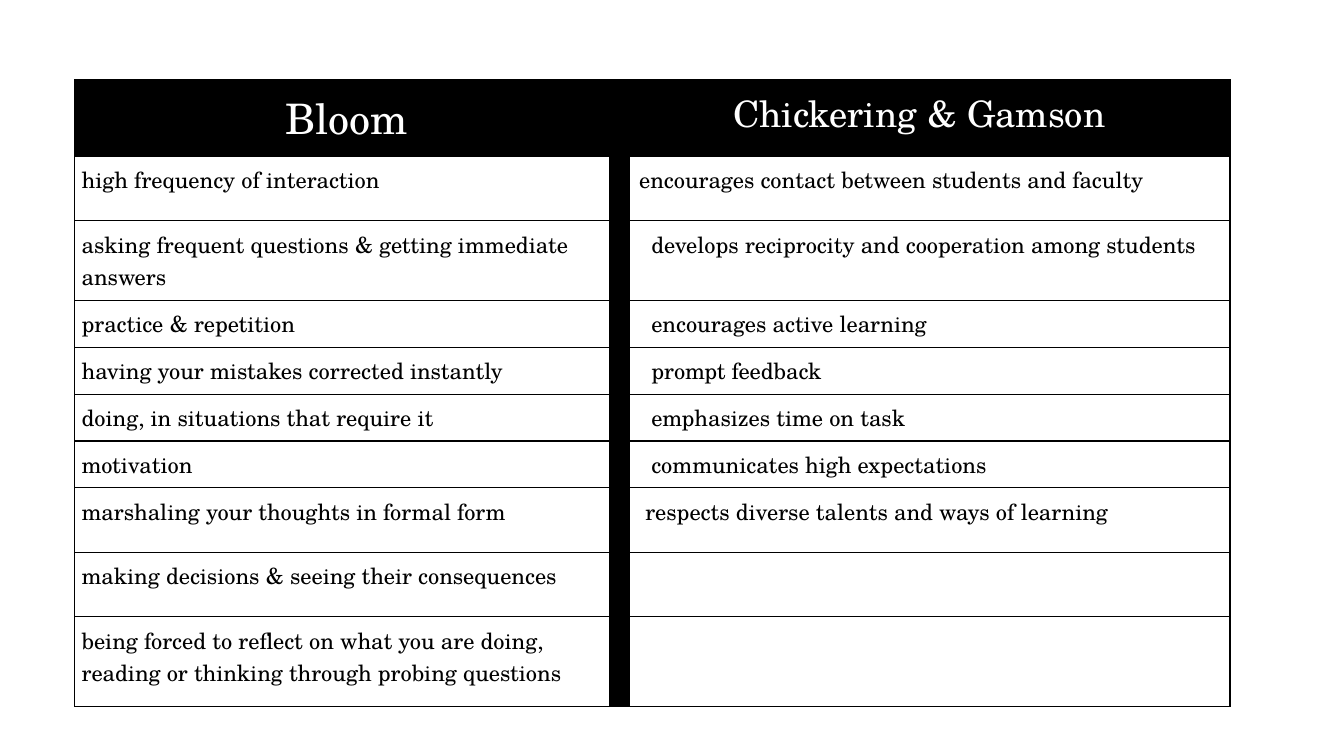
from lxml.etree import SubElement
from pptx import Presentation
from pptx.dml.color import RGBColor as RGB
from pptx.enum.text import PP_ALIGN as Align
from pptx.oxml.ns import qn
from pptx.util import Inches, Pt

COLORS = {"ink": "000000", "paper": "FFFFFF"}
COLS = [5.4, 6.06]
ROWS = [0.76, 0.64, 0.64, 0.41, 0.46, 0.41, 0.41, 0.64, 0.64, 0.89]
HEADERS = [("Bloom", 30), ("Chickering & Gamson ", 26)]
PRINCIPLES = [
    ("high frequency of interaction", "encourages contact between students and faculty", 0.13),
    ("asking frequent questions & getting immediate answers",
     "develops reciprocity and cooperation among students", 0.25),
    ("practice & repetition", "encourages active learning", 0.25),
    ("having your mistakes corrected instantly", "prompt feedback", 0.25),
    ("doing, in situations that require it", "emphasizes time on task", 0.25),
    ("motivation", "communicates high expectations", 0.25),
    ("marshaling your thoughts in formal form",
     "respects diverse talents and ways of learning", 0.19),
    ("making decisions & seeing their consequences", "", 0),
    ("being forced to reflect on what you are doing, "
     "reading or thinking through probing questions", "", 0),
]


class Deck:
    font = "TeX Gyre Schola"
    body_size = 16
    inset = Inches(0.07)
    thin, thick = 1, 17

    def __init__(self, prs):
        self.s = prs.slides.add_slide(prs.slide_layouts[6])

    def table(self, left, top, cols, rows):
        frame = self.s.shapes.add_table(
            len(rows), len(cols), Inches(left), Inches(top),
            Inches(sum(cols)), Inches(sum(rows)))
        t = frame.table
        t.first_row = t.horz_banding = False
        for col, width in zip(t.columns, cols):
            col.width = Inches(width)
        for row, height in zip(t.rows, rows):
            row.height = Inches(height)
        return t

    def borders(self, cell, **widths):
        tcPr = cell._tc.get_or_add_tcPr()
        for side in "LRTB":
            ln = SubElement(tcPr, qn(f"a:ln{side}"), w=str(Pt(widths.get(side, self.thin))))
            fill = SubElement(ln, qn("a:solidFill"))
            SubElement(fill, qn("a:srgbClr"), val=COLORS["ink"])

    def cell(self, cell, text, size=body_size, color="ink", fill="paper",
             align=Align.LEFT, indent=0, **widths):
        self.borders(cell, **widths)
        cell.fill.solid()
        cell.fill.fore_color.rgb = RGB.from_string(COLORS[fill])
        cell.margin_left = cell.margin_right = self.inset
        cell.margin_top = cell.margin_bottom = self.inset
        if not text:
            return
        p = cell.text_frame.paragraphs[0]
        p.alignment = align
        if indent:
            pPr = p._p.get_or_add_pPr()
            pPr.set("marL", str(Inches(indent)))
            pPr.set("indent", "0")
        r = p.add_run()
        r.text = text
        r.font.name = self.font
        r.font.size = Pt(size)
        r.font.color.rgb = RGB.from_string(COLORS[color])


def main():
    prs = Presentation()
    prs.slide_width, prs.slide_height = Inches(13.33), Inches(7.5)
    deck = Deck(prs)
    t = deck.table(0.74, 0.79, COLS, ROWS)
    dividers = [{"R": deck.thick}, {"L": deck.thick}]
    for c, (name, size) in enumerate(HEADERS):
        deck.cell(t.cell(0, c), name, size, "paper", "ink", Align.CENTER, **dividers[c])
    for i, (bloom, gamson, indent) in enumerate(PRINCIPLES, 1):
        deck.cell(t.cell(i, 0), bloom, **dividers[0])
        deck.cell(t.cell(i, 1), gamson, indent=indent, **dividers[1])
    prs.save("out.pptx")


if __name__ == "__main__":
    main()
